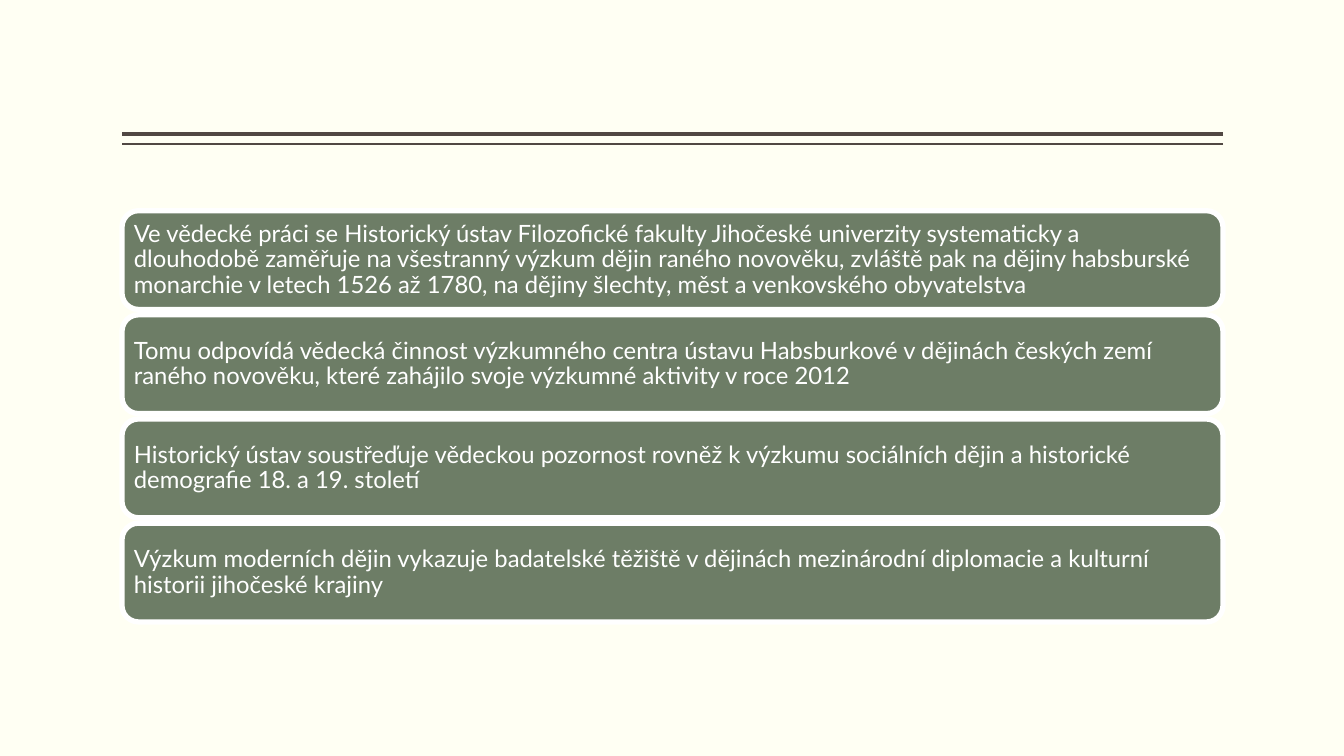
from lxml.etree import SubElement
from pptx import Presentation
from pptx.dml.color import RGBColor
from pptx.enum.shapes import MSO_CONNECTOR, MSO_SHAPE
from pptx.enum.text import MSO_ANCHOR, PP_ALIGN
from pptx.oxml.ns import qn
from pptx.util import Inches, Pt

LEFT, WIDTH = 1.21, 10.92
FIRST_TOP, LAST_TOP, BOX_HEIGHT = 2.09, 5.19, 0.98

RESEARCH_AREAS = [
    "Ve vědecké práci se Historický ústav Filozofické fakulty Jihočeské univerzity "
    "systematicky a dlouhodobě zaměřuje na všestranný výzkum dějin raného novověku, "
    "zvláště pak na dějiny habsburské monarchie v letech 1526 až 1780, "
    "na dějiny šlechty, měst a venkovského obyvatelstva",
    "Tomu odpovídá vědecká činnost výzkumného centra ústavu Habsburkové "
    "v dějinách českých zemí raného novověku, které zahájilo svoje výzkumné "
    "aktivity v roce 2012",
    "Historický ústav soustřeďuje vědeckou pozornost rovněž k výzkumu sociálních "
    "dějin a historické demografie 18. a 19. století",
    "Výzkum moderních dějin vykazuje badatelské těžiště v dějinách mezinárodní "
    "diplomacie a kulturní historii jihočeské krajiny",
]


def color(hex_string):
    return RGBColor.from_string(hex_string)


class SlideBuilder:
    font = "Lato"
    text_size = 17
    background = "FFFFF3"
    rule_color = "514843"
    box_color = "6D7D66"
    light = "FFFFFF"

    def __init__(self, slide):
        self.slide = slide
        fill = slide.background.fill
        fill.solid()
        fill.fore_color.rgb = color(self.background)

    def rule(self, top, weight):
        line = self.slide.shapes.add_connector(
            MSO_CONNECTOR.STRAIGHT,
            Inches(LEFT + WIDTH), Inches(top), Inches(LEFT), Inches(top))
        line.line.color.rgb = color(self.rule_color)
        line.line.width = Pt(weight)
        SubElement(line._element.spPr, qn("a:effectLst"))

    def text_box(self, top, text):
        shape = self.slide.shapes.add_shape(
            MSO_SHAPE.ROUNDED_RECTANGLE,
            Inches(LEFT), Inches(top), Inches(WIDTH), Inches(BOX_HEIGHT))
        shape.shadow.inherit = False
        shape.fill.solid()
        shape.fill.fore_color.rgb = color(self.box_color)
        shape.line.color.rgb = color(self.light)
        shape.line.width = Pt(3.78)

        frame = shape.text_frame
        frame.word_wrap = True
        frame.vertical_anchor = MSO_ANCHOR.MIDDLE
        frame.margin_left = frame.margin_right = Inches(0.07)
        frame.margin_top = frame.margin_bottom = Inches(0.07)
        paragraph = frame.paragraphs[0]
        paragraph.text = text
        paragraph.alignment = PP_ALIGN.LEFT
        paragraph.line_spacing = 0.9
        paragraph.font.name = self.font
        paragraph.font.size = Pt(self.text_size)
        paragraph.font.color.rgb = color(self.light)


def main():
    presentation = Presentation()
    presentation.slide_width = Inches(13.33)
    presentation.slide_height = Inches(7.5)
    blank_layout = presentation.slide_layouts[6]
    builder = SlideBuilder(presentation.slides.add_slide(blank_layout))

    builder.rule(1.33, 3)
    builder.rule(1.43, 1)
    step = (LAST_TOP - FIRST_TOP) / (len(RESEARCH_AREAS) - 1)
    for index, text in enumerate(RESEARCH_AREAS):
        builder.text_box(FIRST_TOP + index * step, text)

    presentation.save("out.pptx")


if __name__ == "__main__":
    main()
